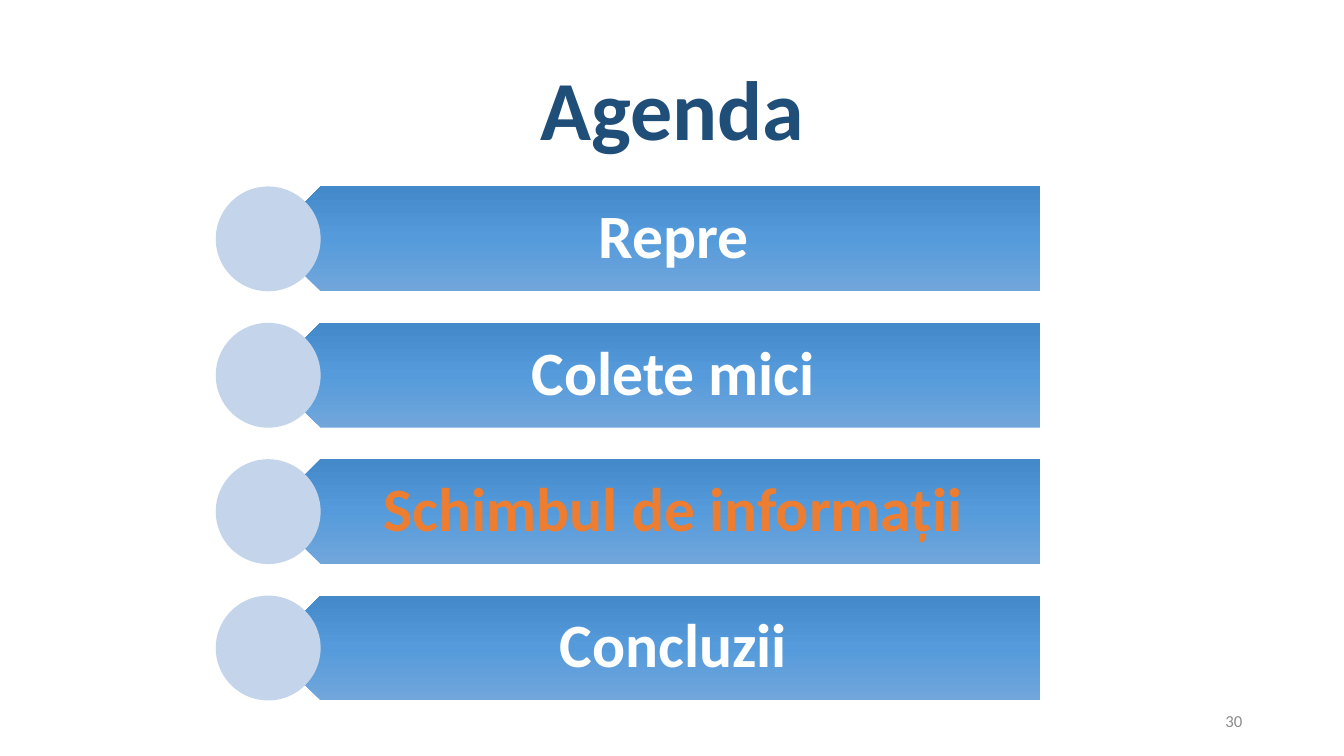
from copy import deepcopy

from pptx import Presentation
from pptx.dml.color import RGBColor
from pptx.enum import shapes, text
from pptx.util import Inches, Pt

WHITE, ORANGE = "FFFFFF", "ED7D31"
BAR_GRADIENT = [(0, "71A6DB"), (0.5, "559BDB"), (1, "448ACA")]
AGENDA = [
    ("Repre", WHITE),
    ("Colete mici", WHITE),
    ("Schimbul de informații", ORANGE),
    ("Concluzii", WHITE),
]
TOP, PITCH, HEIGHT = 1.85, 1.353, 1.04


def color(hex_value):
    return RGBColor.from_string(hex_value)


def add_text(box, words, align, spacing, font_format, margins=(0.1, 0.05, 0.1, 0.05)):
    frame = box.text_frame
    frame.word_wrap = True
    frame.vertical_anchor = text.MSO_ANCHOR.MIDDLE
    for side, margin in zip(("left", "top", "right", "bottom"), margins):
        setattr(frame, f"margin_{side}", Inches(margin))
    paragraph = frame.paragraphs[0]
    paragraph.alignment = align
    paragraph.line_spacing = spacing
    run = paragraph.add_run()
    run.text = words
    run.font.color.rgb = color(font_format["color"])
    for name in ("name", "size", "bold"):
        setattr(run.font, name, font_format[name])


presentation = Presentation()
presentation.slide_width, presentation.slide_height = Inches(13.33), Inches(7.5)

# Title: the layout with only a title gives a real title placeholder
slide = presentation.slides.add_slide(presentation.slide_layouts[5])
for placeholder in list(slide.placeholders):
    if placeholder != slide.shapes.title:
        placeholder.element.getparent().remove(placeholder.element)
title = slide.shapes.title
title.left, title.top = Inches(0.92), Inches(0.4)
title.width, title.height = Inches(11.5), Inches(1.45)
add_text(title, "Agenda", text.PP_ALIGN.CENTER, 0.9,
         {"name": "Calibri", "size": Pt(60), "bold": True, "color": "1F4E79"})

# Slide number
number = slide.shapes.add_textbox(Inches(9.42), Inches(6.95), Inches(3), Inches(0.4))
add_text(number, "30", text.PP_ALIGN.RIGHT, 1,
         {"name": "Calibri", "size": Pt(12), "bold": False, "color": "8C8C8C"})

# Agenda rows: left-pointing bar, label and circle
for row, (label, label_color) in enumerate(AGENDA):
    top = Inches(TOP + row * PITCH)
    bar = slide.shapes.add_shape(shapes.MSO_SHAPE.PENTAGON, Inches(2.66), top,
                                 Inches(7.66), Inches(HEIGHT))
    bar.rotation = 180
    bar.fill.gradient()
    bar.fill.gradient_angle = 270
    stop_list = bar.element.xpath(".//a:gsLst")[0]
    stop_list.insert(1, deepcopy(stop_list[0]))
    for stop, (position, stop_color) in zip(bar.fill.gradient_stops, BAR_GRADIENT):
        stop.position = position
        stop.color.rgb = color(stop_color)

    label_box = slide.shapes.add_textbox(Inches(2.92), top, Inches(7.4), Inches(HEIGHT))
    add_text(label_box, label, text.PP_ALIGN.CENTER, 0.9,
             {"name": "Calibri", "size": Pt(44), "bold": True, "color": label_color},
             (0.46, 0.18, 0.34, 0.18))

    circle = slide.shapes.add_shape(shapes.MSO_SHAPE.OVAL, Inches(2.14), top,
                                    Inches(HEIGHT), Inches(HEIGHT))
    circle.fill.solid()
    circle.fill.fore_color.rgb = color("C4D5EB")
    for shape in (bar, circle):
        shape.shadow.inherit = False
        shape.line.fill.background()

presentation.save("out.pptx")
